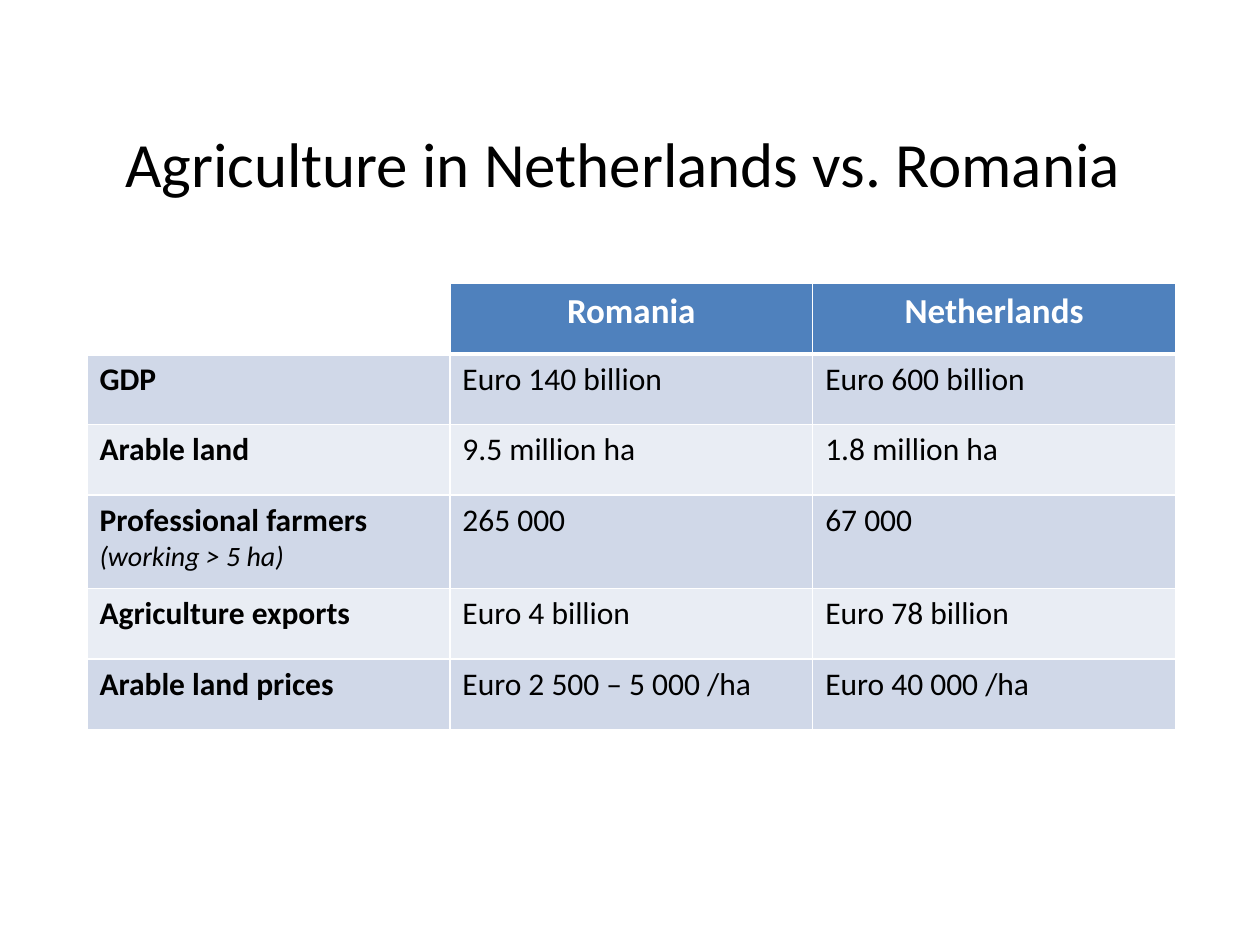
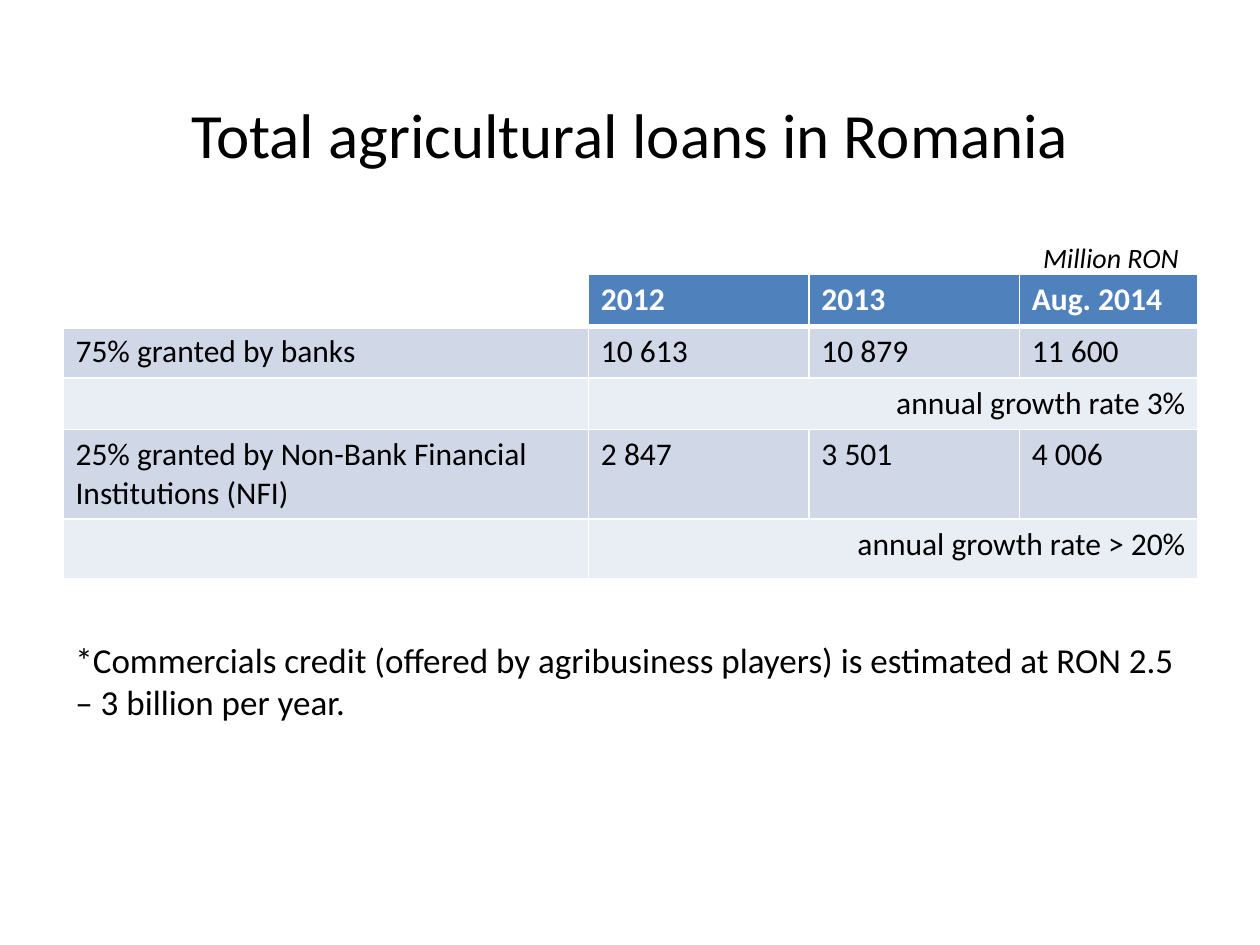
from dataclasses import dataclass
from lxml.etree import SubElement as Sub
from pptx import Presentation
from pptx.dml.color import RGBColor as Rgb
from pptx.enum.text import MSO_ANCHOR as Anchor, MSO_AUTO_SIZE as Auto, PP_ALIGN as Align
from pptx.oxml.ns import qn
from pptx.util import Inches, Pt


@dataclass(frozen=True)
class Theme:
    font: str = "Calibri"
    ink: str = "000000"
    white: str = "FFFFFF"
    head: str = "4F81BD"
    dark: str = "D0D8E8"
    light: str = "E9EDF4"
    title: int = 36
    large: int = 20
    body: int = 18
    small: int = 16
    thin: int = 1
    thick: int = 3


class Deck:
    def __init__(self, theme):
        self.theme = theme
        self.prs = Presentation()
        self.prs.slide_width = Inches(10)
        self.prs.slide_height = Inches(7.5)
        self.slide = None

    def add_run(self, para, text, size, color=None, bold=False, italic=False):
        run = para.add_run()
        run.text = text
        font = run.font
        font.name = self.theme.font
        font.size = Pt(size)
        font.bold = bold
        font.italic = italic
        font.color.rgb = Rgb.from_string(color or self.theme.ink)

    def page(self, title, box):
        self.slide = self.prs.slides.add_slide(self.prs.slide_layouts[5])
        shape = self.slide.shapes.title
        shape.left, shape.top, shape.width, shape.height = map(Inches, box)
        frame = shape.text_frame
        frame.vertical_anchor = Anchor.MIDDLE
        para = frame.paragraphs[0]
        para.alignment = Align.CENTER
        self.add_run(para, title, self.theme.title)

    def label(self, words, box, size, wrap=True, italic=False):
        frame = self.slide.shapes.add_textbox(*map(Inches, box)).text_frame
        frame.word_wrap = wrap
        frame.auto_size = Auto.SHAPE_TO_FIT_TEXT
        self.add_run(frame.paragraphs[0], words, size, italic=italic)

    def edges(self, cell, row):
        look = self.theme
        props = cell._tc.get_or_add_tcPr()
        for side in "LRTB":
            heavy = (row, side) in ((0, "B"), (1, "T"))
            width = look.thick if heavy else look.thin
            line = Sub(props, qn(f"a:ln{side}"), w=str(Pt(width)))
            fill = Sub(line, qn("a:solidFill"))
            Sub(fill, qn("a:srgbClr"), val=look.white)

    def paint(self, cell, row, col):
        look = self.theme
        if row == 0:
            color = look.head if col else look.white
        else:
            color = look.dark if row % 2 else look.light
        cell.fill.solid()
        cell.fill.fore_color.rgb = Rgb.from_string(color)

    def entry(self, cell, words, row, bold, size, align):
        look = self.theme
        first, *notes = words.split("\n")
        para = cell.text_frame.paragraphs[0]
        para.alignment = align
        color = look.ink if row else look.white
        self.add_run(para, first, size, color, bold)
        for note in notes:
            para = cell.text_frame.add_paragraph()
            self.add_run(para, note, look.small, italic=True)

    def table(self, rows, spot, widths, heights, size, align, labels=False):
        look = self.theme
        count = len(widths)
        box = *spot, sum(widths), sum(heights)
        grid = self.slide.shapes.add_table(len(rows), count, *map(Inches, box)).table
        grid.first_row = grid.horz_banding = False
        for part, width in zip(grid.columns, widths):
            part.width = Inches(width)
        for part, height in zip(grid.rows, heights):
            part.height = Inches(height)
        for row, items in enumerate(rows):
            for col in range(count):
                cell = grid.cell(row, col)
                self.edges(cell, row)
                self.paint(cell, row, col)
            wide = len(items) < count
            if wide:
                grid.cell(row, 1).merge(grid.cell(row, count - 1))
            for col, words in enumerate(items):
                if not words:
                    continue
                head = row == 0
                side = align if head else Align.RIGHT if wide else Align.LEFT
                bold = head or labels and col == 0
                self.entry(grid.cell(row, col), words, row, bold,
                           size if head else look.body, side)


def main():
    look = Theme()
    deck = Deck(look)

    deck.page("Agriculture in Netherlands vs. Romania ", (0.69, 0.56, 8.62, 1.45))
    farms = [
        ("", "Romania", "Netherlands"),
        ("GDP", "Euro 140 billion", "Euro 600 billion"),
        ("Arable land", "9.5 million ha", "1.8 million ha"),
        ("Professional farmers\n(working > 5 ha)", "265 000", "67 000"),
        ("Agriculture exports", "Euro 4 billion", "Euro 78 billion"),
        ("Arable land prices", "Euro 2 500 – 5 000 /ha", "Euro 40 000 /ha"),
    ]
    tall = [0.74 if "\n" in row[0] else 0.56 for row in farms]
    deck.table(farms, (0.69, 2.25), [2.88] * 3, tall, look.large, Align.CENTER, labels=True)

    deck.page("Total agricultural loans in Romania", (0.5, 0.43, 9, 1.25))
    loans = [
        ("", "2012", "2013", "Aug. 2014"),
        ("75% granted by banks", "10 613", "10 879", "11 600"),
        ("", "annual growth rate 3%"),
        ("25% granted by Non-Bank Financial Institutions (NFI)", "2 847", "3 501", "4 006"),
        ("", "annual growth rate > 20%"),
    ]
    deck.table(loans, (0.5, 2.18), [4.17, 1.75, 1.67, 1.42],
               [0.41, 0.41, 0.41, 0.7, 0.47], look.body, Align.LEFT)
    deck.label("*Commercials credit (offered by agribusiness players) is estimated at "
               "RON 2.5 – 3 billion per year.", (0.5, 5.02, 9.08, 0.77), look.large)
    deck.label("Million RON", (8.18, 1.86, 1.3, 0.37), look.small, wrap=False, italic=True)

    deck.prs.save("out.pptx")


if __name__ == "__main__":
    main()
